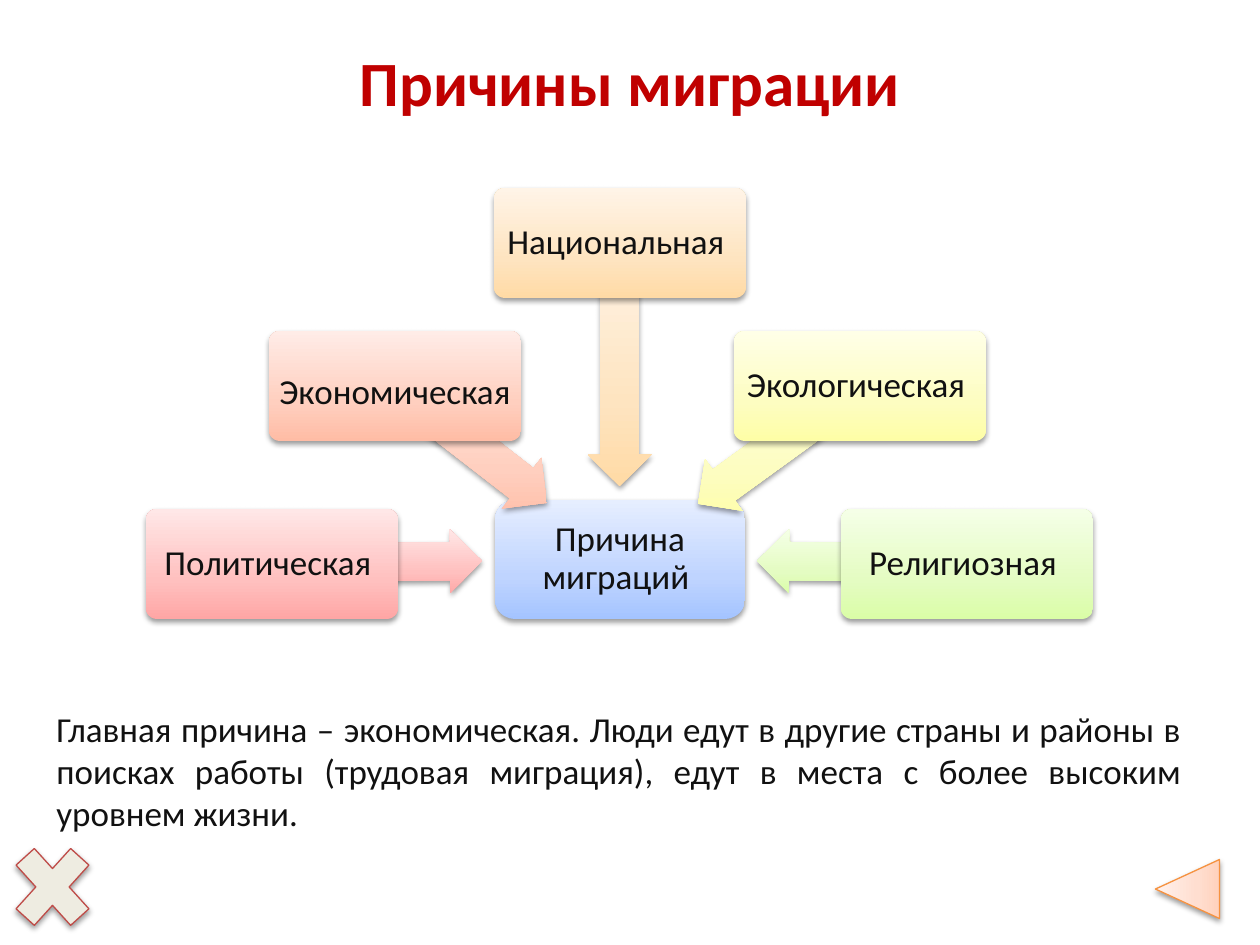
import copy
from dataclasses import dataclass

import lxml.etree
import pptx
import pptx.dml.color
import pptx.enum.shapes
import pptx.enum.text
import pptx.oxml.ns
import pptx.util

SHAPE = pptx.enum.shapes.MSO_SHAPE
ALIGN = pptx.enum.text.PP_ALIGN
ANCHOR = pptx.enum.text.MSO_ANCHOR
EMU_PER_PX = 914400 / 126


@dataclass(frozen=True)
class Theme:
    font: str = "Calibri"
    title_size: int = 36
    text_size: int = 20
    title: str = "C00000"
    text: str = "111111"
    cross: str = "EEECE1"
    cross_line: str = "BF4C48"
    back_line: str = "F69240"
    # Gradients run from the bottom edge to the top edge.
    back: tuple = ("FFD2BD", "FFDED0", "FFF2ED")
    hub: tuple = ("A4C4FF", "BFD4FF", "E6EEFF")
    political: tuple = ("FFA6A5", "FFC0BF", "FFE7E7")
    economic: tuple = ("FFBCA5", "FFCFBF", "FFECE7")
    national: tuple = ("FFDAA5", "FEE4C0", "FFF4E7")
    ecological: tuple = ("FEFEA6", "FDFDC1", "FFFFE7")
    religious: tuple = ("DAFDA7", "E4FCC2", "F5FFE7")


THEME = Theme()
NODE_WIDTH, NODE_HEIGHT = 252, 110
ARROW_HEIGHT = 64

# text, colours, node (left, top), arrow (left, top, width, rotation)
CAUSES = [
    ("Политическая ", THEME.political, (146, 509), (272, 530, 210, 179.4)),
    ("Экономическая ", THEME.economic, (269, 331), (375, 412, 192, 217.8)),
    ("Национальная ", THEME.national, (494, 188), (498, 333, 243, 269.9)),
    ("Экологическая ", THEME.ecological, (734, 331), (679, 413, 200, 324)),
    ("Религиозная ", THEME.religious, (841, 509), (757, 530, 209, 0.6)),
]


def px(value):
    return pptx.util.Emu(round(value * EMU_PER_PX))


def rgb(value):
    return pptx.dml.color.RGBColor.from_string(value)


def write_text(shape, text, size=THEME.text_size, color=THEME.text, bold=False,
               align=ALIGN.CENTER, anchor=ANCHOR.MIDDLE, line_spacing=None, inset=None):
    frame = shape.text_frame
    frame.word_wrap = True
    frame.vertical_anchor = anchor
    if inset is not None:
        frame.margin_left = frame.margin_right = px(inset)
        frame.margin_top = frame.margin_bottom = px(inset)
    paragraph = frame.paragraphs[0]
    paragraph.alignment = align
    paragraph.line_spacing = line_spacing
    run = paragraph.add_run()
    run.text = text
    run.font.name = THEME.font
    run.font.size = pptx.util.Pt(size)
    run.font.bold = bold
    run.font.color.rgb = rgb(color)
    return paragraph


def fill_gradient(shape, colors, turns_with_shape):
    shape.fill.gradient()
    shape.fill.gradient_angle = 90
    gradient = shape._element.spPr.find(pptx.oxml.ns.qn("a:gradFill"))
    gradient.set("rotWithShape", "1" if turns_with_shape else "0")
    stop_list = gradient.find(pptx.oxml.ns.qn("a:gsLst"))
    stop_list.insert(1, copy.deepcopy(stop_list[0]))
    for stop, color, position in zip(shape.fill.gradient_stops, colors, (0, 0.35, 1)):
        stop.color.rgb = rgb(color)
        stop.position = position


def add_soft_shadow(shape):
    shape.shadow.inherit = False
    effects = shape._element.spPr.find(pptx.oxml.ns.qn("a:effectLst"))
    shadow = lxml.etree.SubElement(
        effects, pptx.oxml.ns.qn("a:outerShdw"),
        blurRad="40000", dist="20000", dir="5400000", rotWithShape="0")
    color = lxml.etree.SubElement(shadow, pptx.oxml.ns.qn("a:srgbClr"), val="000000")
    lxml.etree.SubElement(color, pptx.oxml.ns.qn("a:alpha"), val="38000")


def add_raised_shape(slide, kind, left, top, width, height, fill, line=None,
                     adjustments=(), rotation=0, turns_with_shape=False):
    """Add a shadowed preset; fill is one colour or three gradient colours."""
    shape = slide.shapes.add_shape(kind, px(left), px(top), px(width), px(height))
    shape.rotation = rotation
    for index, value in enumerate(adjustments):
        shape.adjustments[index] = value
    if isinstance(fill, tuple):
        fill_gradient(shape, fill, turns_with_shape)
    else:
        shape.fill.solid()
        shape.fill.fore_color.rgb = rgb(fill)
    if line:
        shape.line.color.rgb = rgb(line)
        shape.line.width = pptx.util.Pt(0.75)
    else:
        shape.line.fill.background()
    add_soft_shadow(shape)
    return shape


def add_title(slide, text):
    title = slide.shapes.title
    title.left, title.top, title.width, title.height = map(px, (63, 38, 1134, 87))
    write_text(title, text, size=THEME.title_size, color=THEME.title, bold=True)


def add_navigation(slide):
    add_raised_shape(slide, SHAPE.MATH_MULTIPLY, 0, 829, 105, 116,
                     THEME.cross, line=THEME.cross_line, adjustments=(0.235,))
    add_raised_shape(slide, SHAPE.ISOSCELES_TRIANGLE, 1158, 857, 59, 64, THEME.back,
                     line=THEME.back_line, rotation=270, turns_with_shape=True)


def add_hub(slide, text):
    hub = add_raised_shape(slide, SHAPE.ROUNDED_RECTANGLE, 495, 500, 250, 119, THEME.hub)
    write_text(hub, text, line_spacing=0.9, inset=1)


def add_cause(slide, text, colors, node_place, arrow_place):
    left, top, width, rotation = arrow_place
    add_raised_shape(slide, SHAPE.LEFT_ARROW, left, top, width, ARROW_HEIGHT, colors,
                     adjustments=(0.6, 0.5), rotation=rotation)
    node = add_raised_shape(slide, SHAPE.ROUNDED_RECTANGLE, *node_place,
                            NODE_WIDTH, NODE_HEIGHT, colors, adjustments=(0.1,))
    paragraph = write_text(node, text.rstrip(), line_spacing=0.9, inset=5)
    space = paragraph.add_run()
    space.text = " "
    space.font.name = THEME.font
    space.font.size = pptx.util.Pt(32 if colors == THEME.economic else THEME.text_size)


def add_conclusion(slide, text):
    box = slide.shapes.add_textbox(px(44), px(701), px(1150), px(140))
    write_text(box, text, align=ALIGN.JUSTIFY, anchor=ANCHOR.TOP)
    box.text_frame.auto_size = pptx.enum.text.MSO_AUTO_SIZE.SHAPE_TO_FIT_TEXT


def main():
    presentation = pptx.Presentation()
    presentation.slide_width, presentation.slide_height = px(1260), px(945)
    slide = presentation.slides.add_slide(presentation.slide_layouts.get_by_name("Title Only"))
    add_navigation(slide)
    add_title(slide, "Причины миграции")
    add_hub(slide, "Причина миграций ")
    for cause in CAUSES:
        add_cause(slide, *cause)
    add_conclusion(slide, "Главная причина – экономическая. Люди едут в другие страны и районы "
                          "в поисках работы (трудовая миграция), едут в места с более высоким "
                          "уровнем жизни.")
    presentation.save("out.pptx")


if __name__ == "__main__":
    main()
